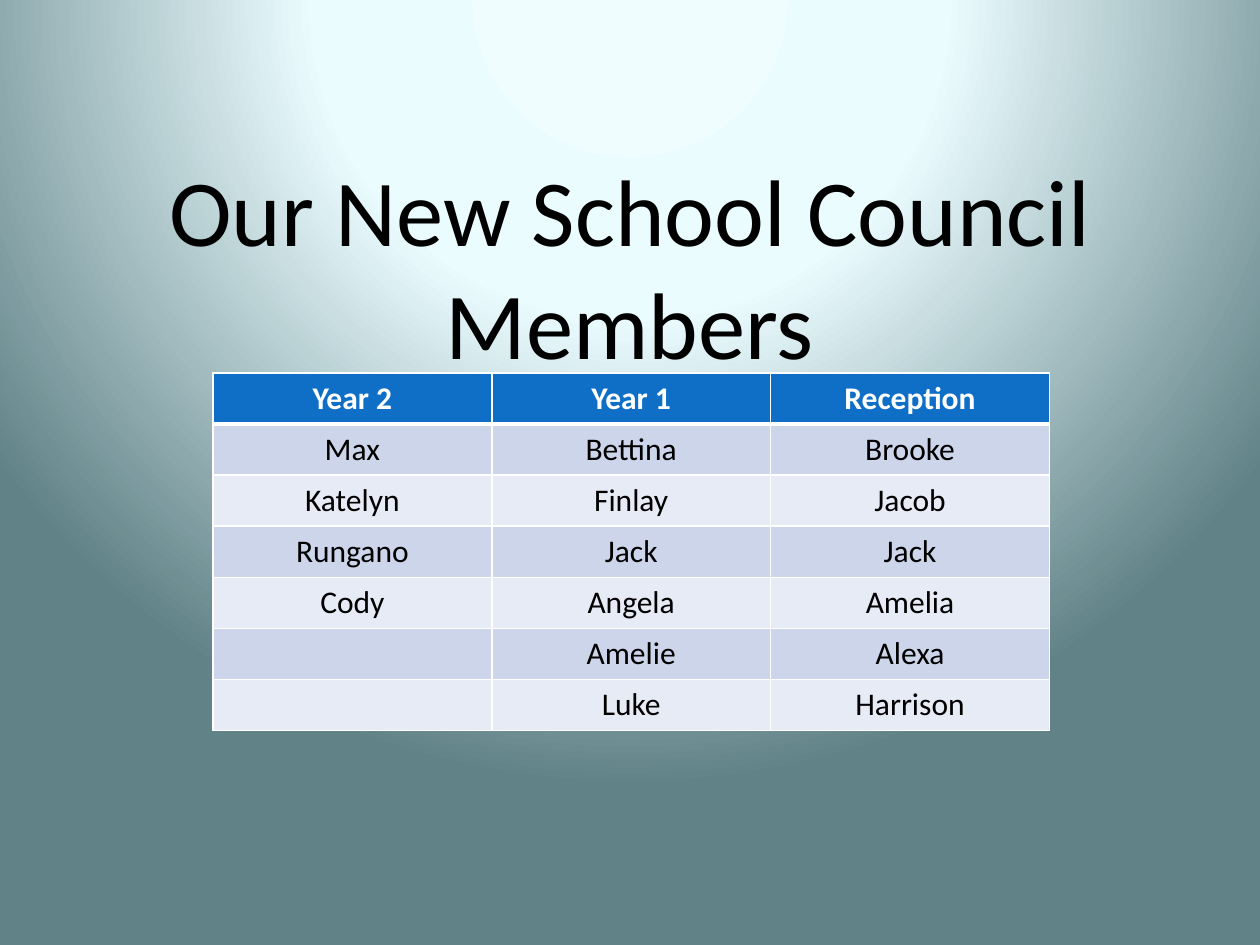
from lxml.etree import SubElement
from pptx import Presentation
from pptx.dml.color import RGBColor
from pptx.enum.text import MSO_ANCHOR, PP_ALIGN
from pptx.oxml import parse_xml
from pptx.oxml.ns import nsdecls, qn
from pptx.util import Pt

TITLE = "Our New School Council Members"
MEMBERS = [
    ("Year 2", "Year 1", "Reception"),
    ("Max", "Bettina", "Brooke"),
    ("Katelyn", "Finlay", "Jacob"),
    ("Rungano", "Jack", "Jack"),
    ("Cody", "Angela", "Amelia"),
    ("", "Amelie", "Alexa"),
    ("", "Luke", "Harrison"),
]
BACKDROP = [(0, "EFFDFF"), (40, "EBFCFF"), (100, "618287")]
HEADER_FILL = "0F6FC6"
BAND_FILLS = ["E7EBF5", "CCD5EA"]
BLACK, WHITE = "000000", "FFFFFF"
FONT = "Calibri"
COLUMN_WIDTH, ROW_HEIGHT = 159.36, 29
TABLE_LEFT, TABLE_TOP = 121.68, 213.12


def color(value):
    return RGBColor.from_string(value)


def write_text(text_frame, text, size=18, fill=BLACK, bold=False):
    paragraph = text_frame.paragraphs[0]
    paragraph.alignment = PP_ALIGN.CENTER
    paragraph.font.size = Pt(size)
    if text:
        run = paragraph.add_run()
        run.text = text
        run.font.name = FONT
        run.font.size = Pt(size)
        run.font.bold = bold
        run.font.color.rgb = color(fill)


def set_backdrop(slide):
    slide.background.fill.solid()
    properties = slide.element.xpath(".//p:bgPr")[0]
    stops = "".join(
        f'<a:gs pos="{position * 1000}"><a:srgbClr val="{value}"/></a:gs>'
        for position, value in BACKDROP
    )
    gradient = parse_xml(
        f'<a:gradFill {nsdecls("a")} rotWithShape="1"><a:gsLst>{stops}</a:gsLst>'
        '<a:path path="circle"><a:fillToRect l="50000" t="-80000" r="50000" b="180000"/>'
        "</a:path></a:gradFill>"
    )
    properties.replace(properties[0], gradient)


def set_borders(cell, top=1, bottom=1):
    properties = cell._tc.get_or_add_tcPr()
    for side, width in (("L", 1), ("R", 1), ("T", top), ("B", bottom)):
        line = SubElement(properties, qn(f"a:ln{side}"), w=str(Pt(width)))
        fill = SubElement(line, qn("a:solidFill"))
        SubElement(fill, qn("a:srgbClr"), val=WHITE)


def add_title(slide):
    title = slide.shapes.title
    title.left, title.top = Pt(36), Pt(21.6)
    title.width, title.height = Pt(648), Pt(356.4)
    text_frame = title.text_frame
    text_frame.word_wrap = True
    text_frame.vertical_anchor = MSO_ANCHOR.MIDDLE
    text_frame.margin_bottom = Pt(100)
    write_text(text_frame, TITLE, size=54)


def add_members(slide):
    row_count, column_count = len(MEMBERS), len(MEMBERS[0])
    table = slide.shapes.add_table(
        row_count, column_count, Pt(TABLE_LEFT), Pt(TABLE_TOP),
        Pt(COLUMN_WIDTH * column_count), Pt(ROW_HEIGHT * row_count),
    ).table
    for row_index, names in enumerate(MEMBERS):
        header = row_index == 0
        for column_index, name in enumerate(names):
            cell = table.cell(row_index, column_index)
            set_borders(cell, top=3 if row_index == 1 else 1, bottom=3 if header else 1)
            cell.fill.solid()
            cell.fill.fore_color.rgb = color(HEADER_FILL if header else BAND_FILLS[row_index % 2])
            write_text(cell.text_frame, name, fill=WHITE if header else BLACK, bold=header)


def main():
    presentation = Presentation()
    presentation.slide_width, presentation.slide_height = Pt(720), Pt(540)
    slide = presentation.slides.add_slide(presentation.slide_layouts[5])
    set_backdrop(slide)
    add_title(slide)
    add_members(slide)
    presentation.save("out.pptx")


if __name__ == "__main__":
    main()
